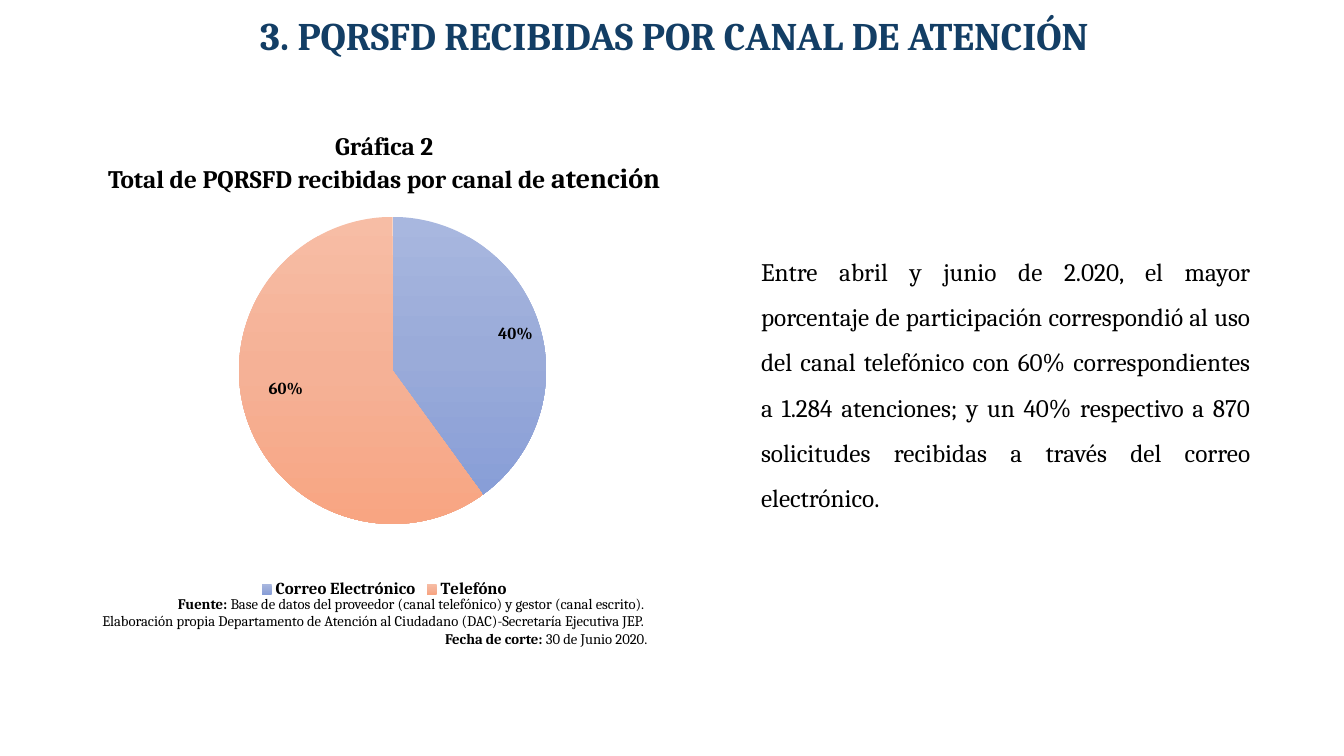
"""Build the slide on PQRSFD received by service channel."""
from copy import deepcopy

from pptx import Presentation
from pptx.chart.data import CategoryChartData
from pptx.dml.color import RGBColor
from pptx.enum.chart import XL_CHART_TYPE as ChartType, XL_LABEL_POSITION as LabelPos
from pptx.enum.chart import XL_LEGEND_POSITION as LegendPos
from pptx.enum.text import MSO_ANCHOR as Anchor, MSO_AUTO_SIZE as AutoSize, PP_ALIGN as Align
from pptx.oxml import parse_xml
from pptx.oxml.ns import nsdecls
from pptx.util import Inches, Pt

TITLE = "3. PQRSFD RECIBIDAS POR CANAL DE ATENCIÓN"
CHANNELS = {"Correo Electrónico": 0.4, "Telefóno": 0.6}
PLOT_AREA = {"x": 0.106, "y": 0.093, "w": 0.819, "h": 0.722}
PHONE_LABEL_SHIFT = {"x": 0.03, "y": -0.04}

THEME = {
    "font": "Cambria",
    "title": RGBColor.from_string("133E65"),
    "text": RGBColor.from_string("000000"),
    "slices": [("A8B7DF", "9AABD9", "889ED7"), ("F7BDA5", "F5B196", "F8A582")],
    "title_size": 27.9, "body": 18, "emphasis": 20, "source": 10.5, "chart": 12,
}

TEXTS = [
    {"box": (7.45, 2.34, 5.05, 2.83), "align": Align.JUSTIFY, "spacing": 1.5, "paragraphs": [
        [("Entre abril y junio de 2.020, el mayor porcentaje de participación correspondió "
          "al uso del canal telefónico con 60% correspondientes a 1.284 atenciones; y un 40% "
          "respectivo a 870 solicitudes recibidas a través del correo electrónico.",
          "body", False)]]},
    {"box": (0.26, 5.85, 6.26, 0.63), "align": Align.RIGHT, "spacing": 1.0, "paragraphs": [
        [("Fuente:", "source", True),
         (" Base de datos del proveedor (canal telefónico) y gestor (canal escrito). ",
          "source", False)],
        [("Elaboración propia Departamento de Atención al Ciudadano (DAC)-Secretaría "
          "Ejecutiva JEP. ", "source", False)],
        [("Fecha de corte: ", "source", True), ("30 de Junio 2020.", "source", False)]]},
    {"box": (0.62, 1.24, 6.38, 0.74), "align": Align.CENTER, "spacing": 1.0, "paragraphs": [
        [("Gráfica 2", "body", True)],
        [("Total de PQRSFD recibidas por canal de ", "body", True),
         ("atención", "emphasis", True)]]},
]


def style(font, size, bold, color="text"):
    font.color.rgb = THEME[color]
    formats = {"name": THEME["font"], "size": Pt(THEME[size]), "bold": bold}
    for key, value in formats.items():
        setattr(font, key, value)


def place(part, box):
    for key, value in zip(("left", "top", "width", "height"), box):
        setattr(part, key, Inches(value))


def manual_layout(values, inner=False):
    target = '<c:layoutTarget val="inner"/>' if inner else ""
    modes = '<c:xMode val="edge"/><c:yMode val="edge"/>' if inner else ""
    sizes = "".join(f'<c:{key} val="{value}"/>' for key, value in values.items())
    return parse_xml(f'<c:layout {nsdecls("c")}><c:manualLayout>{target}{modes}{sizes}'
                     "</c:manualLayout></c:layout>")


def add_title(slide):
    title = slide.shapes.title
    place(title, (0.02, 0, 13.34, 0.76))
    frame = title.text_frame
    frame.text = TITLE
    for key, value in {"vertical_anchor": Anchor.MIDDLE, "word_wrap": True,
                       "auto_size": AutoSize.NONE}.items():
        setattr(frame, key, value)
    heading = frame.paragraphs[0]
    heading.alignment, heading.line_spacing = Align.CENTER, 0.9
    style(heading.runs[0].font, "title_size", True, "title")


def add_text(slide, content):
    frame = slide.shapes.add_textbox(*map(Inches, content["box"])).text_frame
    frame.word_wrap, frame.auto_size = True, AutoSize.SHAPE_TO_FIT_TEXT
    for index, runs in enumerate(content["paragraphs"]):
        line = frame.add_paragraph() if index else frame.paragraphs[0]
        line.alignment, line.line_spacing = content["align"], content["spacing"]
        for words, size, bold in runs:
            run = line.add_run()
            run.text = words
            style(run.font, size, bold)


def fill_slice(fill, colors):
    fill.gradient()
    fill.gradient_angle = 270
    first = fill.gradient_stops[0]._gs
    first.addnext(deepcopy(first))
    for stop, position, color in zip(fill.gradient_stops, (0, 0.5, 1), colors):
        stop.position = position
        stop.color.rgb = RGBColor.from_string(color)


def add_channel_chart(slide):
    data = CategoryChartData(number_format="0%")
    data.categories = list(CHANNELS)
    data.add_series("Series 1", list(CHANNELS.values()))
    box = map(Inches, (1.1, 1.76, 5.42, 4.22))
    chart = slide.shapes.add_chart(ChartType.PIE, *box, data).chart
    chart.has_title = False
    chart.has_legend = True
    chart.legend.position = LegendPos.BOTTOM
    chart.legend.include_in_layout = False
    style(chart.font, "chart", False)
    style(chart.legend.font, "chart", True)

    plot = chart.plots[0]
    plot.vary_by_categories = True
    area = plot._element.getparent()
    for layout in area.xpath("c:layout"):
        area.remove(layout)
    area.insert(0, manual_layout(PLOT_AREA, inner=True))

    pie = plot.series[0]
    for index, colors in enumerate(THEME["slices"]):
        fill_slice(pie.points[index].format.fill, colors)
    labels = pie.data_labels
    for key, value in {"show_value": True, "show_percentage": False, "number_format": "0%",
                       "number_format_is_linked": False,
                       "position": LabelPos.INSIDE_END}.items():
        setattr(labels, key, value)
    style(labels.font, "chart", True)

    phone_label = pie.points[1].data_label
    style(phone_label.font, "chart", True)
    phone_label.position = LabelPos.INSIDE_END
    index_mark = pie._element.xpath("c:dLbls/c:dLbl/c:idx")[0]
    index_mark.addnext(parse_xml(
        f'<c:numFmt {nsdecls("c")} formatCode="0%" sourceLinked="0"/>'))
    index_mark.addnext(manual_layout(PHONE_LABEL_SHIFT))


def main():
    deck = Presentation()
    deck.slide_width, deck.slide_height = Inches(13.33), Inches(7.5)
    slide = deck.slides.add_slide(deck.slide_layouts[5])
    add_title(slide)
    for content in TEXTS:
        add_text(slide, content)
    add_channel_chart(slide)
    deck.save("out.pptx")


if __name__ == "__main__":
    main()
